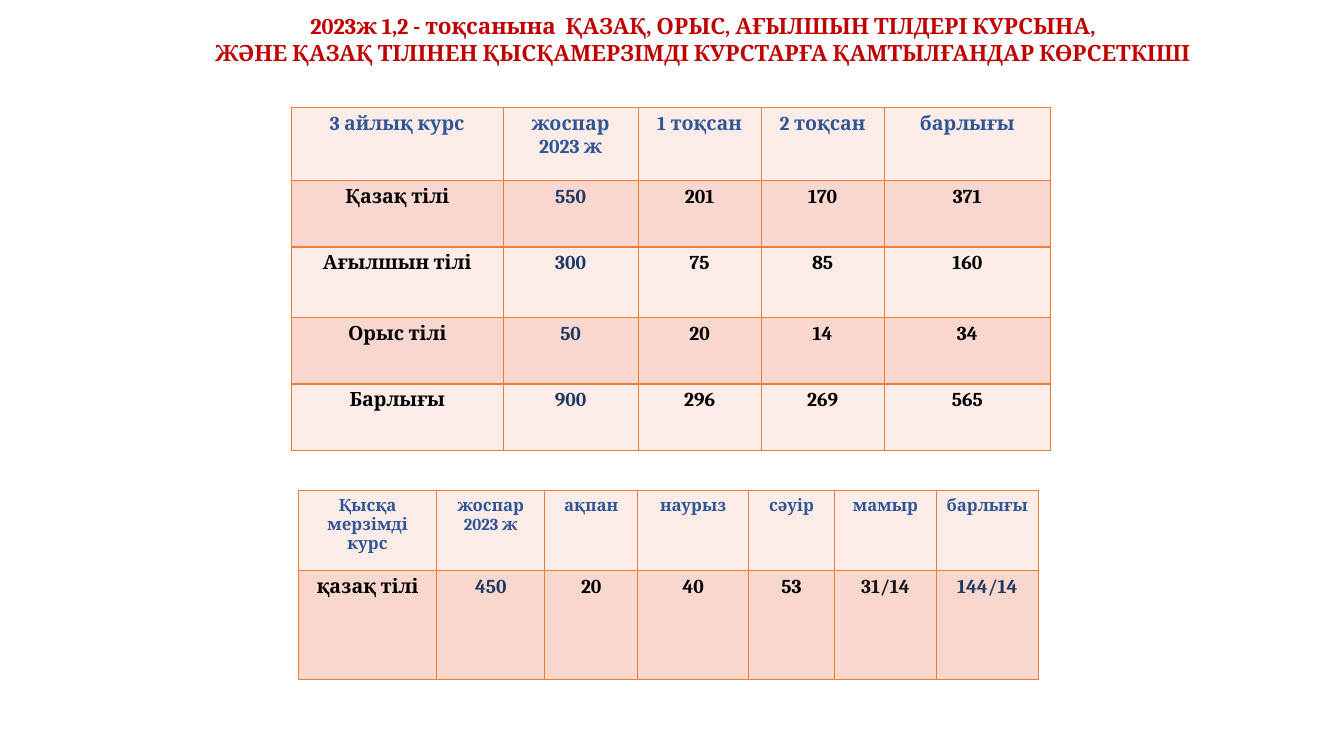
import lxml.etree
import pptx
import pptx.dml.color
import pptx.enum.text
import pptx.oxml.ns
import pptx.util

RGBColor = pptx.dml.color.RGBColor
RED = RGBColor(0xC0, 0x00, 0x00)
BLUE = RGBColor(0x2F, 0x55, 0x97)
NAVY = RGBColor(0x20, 0x38, 0x64)
BLACK = RGBColor(0x00, 0x00, 0x00)
CHARCOAL = RGBColor(0x18, 0x17, 0x17)
ORANGE = RGBColor(0xED, 0x7D, 0x31)
BANDS = (RGBColor(0xFC, 0xEC, 0xE8), RGBColor(0xF8, 0xD7, 0xCE))

FONT = "Cambria"
SLIDE_WIDTH = pptx.util.Inches(13.33)
SLIDE_HEIGHT = pptx.util.Inches(7.5)

# Boxes are left, top, width and height in percent of the slide.
TITLE_BOX = (8.63, 0.93, 87.4, 8.53)
COURSE_BOX = (21.68, 14.27, 56.49, 45.33)
SHORT_COURSE_BOX = (22.21, 64.93, 55.06, 24.93)

TITLE = ("2023ж 1,2 - тоқсанына  ҚАЗАҚ, ОРЫС, АҒЫЛШЫН ТІЛДЕРІ КУРСЫНА,\n"
         "ЖӘНЕ ҚАЗАҚ ТІЛІНЕН ҚЫСҚАМЕРЗІМДІ КУРСТАРҒА ҚАМТЫЛҒАНДАР КӨРСЕТКІШІ")

COURSE_ROWS = (
    ("3 айлық курс", "жоспар\n2023 ж", "1 тоқсан", "2 тоқсан", "барлығы"),
    ("Қазақ тілі", "550", "201", "170", "371"),
    ("Ағылшын тілі", "300", "75", "85", "160"),
    ("Орыс тілі", "50", "20", "14", "34"),
    ("Барлығы", "900", "296", "269", "565"),
)
SHORT_COURSE_ROWS = (
    ("Қысқа\nмерзімді\nкурс", "жоспар\n2023 ж", "ақпан", "наурыз", "сәуір",
     "мамыр", "барлығы"),
    ("қазақ тілі", "450", "20", "40", "53", "31/14", "144/14"),
)


def to_lengths(box):
    left, top, width, height = (share / 100 for share in box)
    return (int(left * SLIDE_WIDTH), int(top * SLIDE_HEIGHT),
            int(width * SLIDE_WIDTH), int(height * SLIDE_HEIGHT))


def write_text(text_frame, text, *, size, color):
    """Write bold centred text, one paragraph for each line."""
    text_frame.text = text
    text_frame.word_wrap = True
    for paragraph in text_frame.paragraphs:
        paragraph.alignment = pptx.enum.text.PP_ALIGN.CENTER
        for run in paragraph.runs:
            run.font.name = FONT
            run.font.size = pptx.util.Pt(size)
            run.font.bold = True
            run.font.color.rgb = color


def set_borders(cell):
    properties = cell._tc.get_or_add_tcPr()
    qn = pptx.oxml.ns.qn
    for position, side in enumerate(("a:lnL", "a:lnR", "a:lnT", "a:lnB")):
        line = lxml.etree.Element(qn(side), w=str(pptx.util.Pt(1)))
        fill = lxml.etree.SubElement(line, qn("a:solidFill"))
        lxml.etree.SubElement(fill, qn("a:srgbClr"), val=str(ORANGE))
        properties.insert(position, line)


def add_title(slide, box):
    title = slide.shapes.title
    title.left, title.top, title.width, title.height = to_lengths(box)
    text_frame = title.text_frame
    text_frame.vertical_anchor = pptx.enum.text.MSO_ANCHOR.TOP
    text_frame.auto_size = pptx.enum.text.MSO_AUTO_SIZE.NONE
    write_text(text_frame, TITLE, size=16, color=RED)


def add_course_table(slide, box, rows, column_shares, row_shares,
                     header_size, value_colors):
    """Fill the box with a banded table; value_colors maps columns to colours."""
    left, top, width, height = to_lengths(box)
    table = slide.shapes.add_table(len(rows), len(column_shares),
                                   left, top, width, height).table
    for column, share in zip(table.columns, column_shares):
        column.width = int(width * share / sum(column_shares))
    for row, share in zip(table.rows, row_shares):
        row.height = int(height * share / sum(row_shares))

    for row_index, texts in enumerate(rows):
        for column_index, text in enumerate(texts):
            cell = table.cell(row_index, column_index)
            cell.margin_left = cell.margin_right = pptx.util.Inches(0.07)
            cell.fill.solid()
            cell.fill.fore_color.rgb = BANDS[row_index % 2]
            set_borders(cell)
            if row_index == 0:
                write_text(cell.text_frame, text, size=header_size, color=BLUE)
            else:
                write_text(cell.text_frame, text, size=14,
                           color=value_colors.get(column_index, BLACK))


def main():
    presentation = pptx.Presentation()
    presentation.slide_width = SLIDE_WIDTH
    presentation.slide_height = SLIDE_HEIGHT
    title_only = presentation.slide_layouts.get_by_name("Title Only")
    slide = presentation.slides.add_slide(title_only)

    add_title(slide, TITLE_BOX)
    add_course_table(slide, COURSE_BOX, COURSE_ROWS,
                     column_shares=(210, 134, 122, 122, 165),
                     row_shares=(72, 66, 70, 66, 66),
                     header_size=14, value_colors={1: NAVY})
    add_course_table(slide, SHORT_COURSE_BOX, SHORT_COURSE_ROWS,
                     column_shares=(137, 107, 92, 110, 85, 101, 101),
                     row_shares=(79, 108), header_size=12,
                     value_colors={1: NAVY, 5: CHARCOAL, 6: NAVY})
    presentation.save("out.pptx")


if __name__ == "__main__":
    main()
